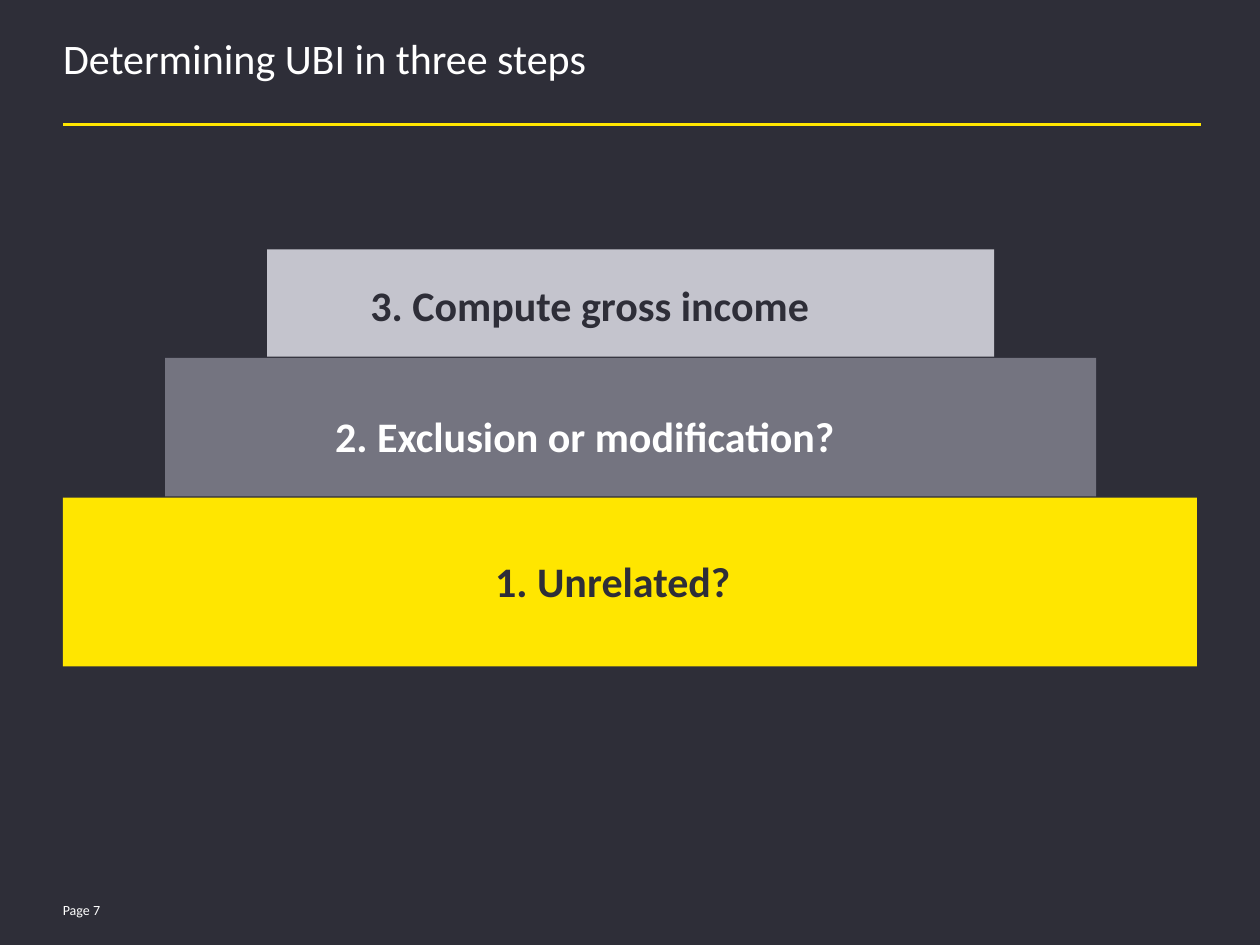
from dataclasses import dataclass

from pptx import Presentation
from pptx.dml.color import RGBColor
from pptx.enum.shapes import MSO_CONNECTOR, MSO_SHAPE
from pptx.enum.text import MSO_ANCHOR as Anchor, PP_ALIGN as Align
from pptx.oxml.ns import qn
from pptx.slide import Slide
from pptx.text.text import TextFrame
from pptx.util import Inches, Pt
from lxml.etree import SubElement

DARK = RGBColor(0x2E, 0x2E, 0x38)
WHITE = RGBColor(0xFF, 0xFF, 0xFF)
YELLOW = RGBColor(0xFF, 0xE6, 0x00)
GREY = RGBColor(0x74, 0x74, 0x80)
LIGHT_GREY = RGBColor(0xC4, 0xC4, 0xCD)

FONT = "Calibri"
LABEL_HEIGHT = 0.4


@dataclass(frozen=True)
class Area:
    left: float
    top: float
    width: float
    height: float

    def lengths(self) -> list[Inches]:
        return [Inches(n) for n in (self.left, self.top, self.width, self.height)]


@dataclass(frozen=True)
class Step:
    text: str
    block: Area
    fill: RGBColor
    color: RGBColor
    label_left: float
    label_top: float
    label_width: float


STEPS = [
    Step("2. Exclusion or modification?", Area(1.31, 2.84, 7.39, 1.1),
         GREY, WHITE, 2.66, 3.26, 4.5),
    Step("3. Compute gross income", Area(2.12, 1.98, 5.77, 0.85),
         LIGHT_GREY, DARK, 2.94, 2.22, 3.94),
    Step("1. Unrelated?", Area(0.5, 3.95, 9, 1.34),
         YELLOW, DARK, 3.93, 4.41, 2.13),
]


def write_text(frame: TextFrame, text: str, *, size: float = 24,
               color: RGBColor = WHITE, bold: bool = False,
               anchor: Anchor = Anchor.TOP, inset: float = 0,
               line_spacing: float = 1.0) -> None:
    frame.word_wrap = True
    frame.vertical_anchor = anchor
    frame.margin_left = frame.margin_right = Inches(inset)
    frame.margin_top = frame.margin_bottom = Inches(inset / 2)
    para = frame.paragraphs[0]
    para.alignment = Align.LEFT
    para.line_spacing = line_spacing
    span = para.add_run()
    span.text = text
    span.font.name = FONT
    span.font.size = Pt(size)
    span.font.bold = bold
    span.font.color.rgb = color


def add_block(page: Slide, step: Step) -> None:
    block = page.shapes.add_shape(MSO_SHAPE.RECTANGLE, *step.block.lengths())
    block.shadow.inherit = False
    block.fill.solid()
    block.fill.fore_color.rgb = step.fill
    block.line.fill.background()


def add_label(page: Slide, step: Step) -> None:
    area = Area(step.label_left, step.label_top, step.label_width, LABEL_HEIGHT)
    box = page.shapes.add_textbox(*area.lengths())
    write_text(box.text_frame, step.text, color=step.color, bold=True,
               anchor=Anchor.MIDDLE)


def add_title(page: Slide, text: str) -> None:
    title = page.shapes.title
    title.left, title.top, title.width, title.height = Area(
        0.5, 0.32, 9, 0.65).lengths()
    write_text(title.text_frame, text, line_spacing=0.85)


def add_title_rule(page: Slide) -> None:
    rule = page.shapes.add_connector(
        MSO_CONNECTOR.STRAIGHT,
        Inches(0.5), Inches(0.99), Inches(9.53), Inches(0.99))
    rule.line.color.rgb = YELLOW
    rule.line.width = Pt(1.5)
    SubElement(rule.element.spPr, qn("a:effectLst"))


def main() -> None:
    deck = Presentation()
    deck.slide_width, deck.slide_height = Inches(10), Inches(7.5)
    page = deck.slides.add_slide(deck.slide_layouts[5])
    page.background.fill.solid()
    page.background.fill.fore_color.rgb = DARK

    page_number = page.shapes.add_textbox(*Area(0.4, 7.11, 0.73, 0.2).lengths())
    write_text(page_number.text_frame, "Page 7", size=8, inset=0.1)
    add_title_rule(page)
    add_title(page, "Determining UBI in three steps")

    for step in STEPS:
        add_block(page, step)
    for step in STEPS:
        add_label(page, step)

    deck.save("out.pptx")


if __name__ == "__main__":
    main()
